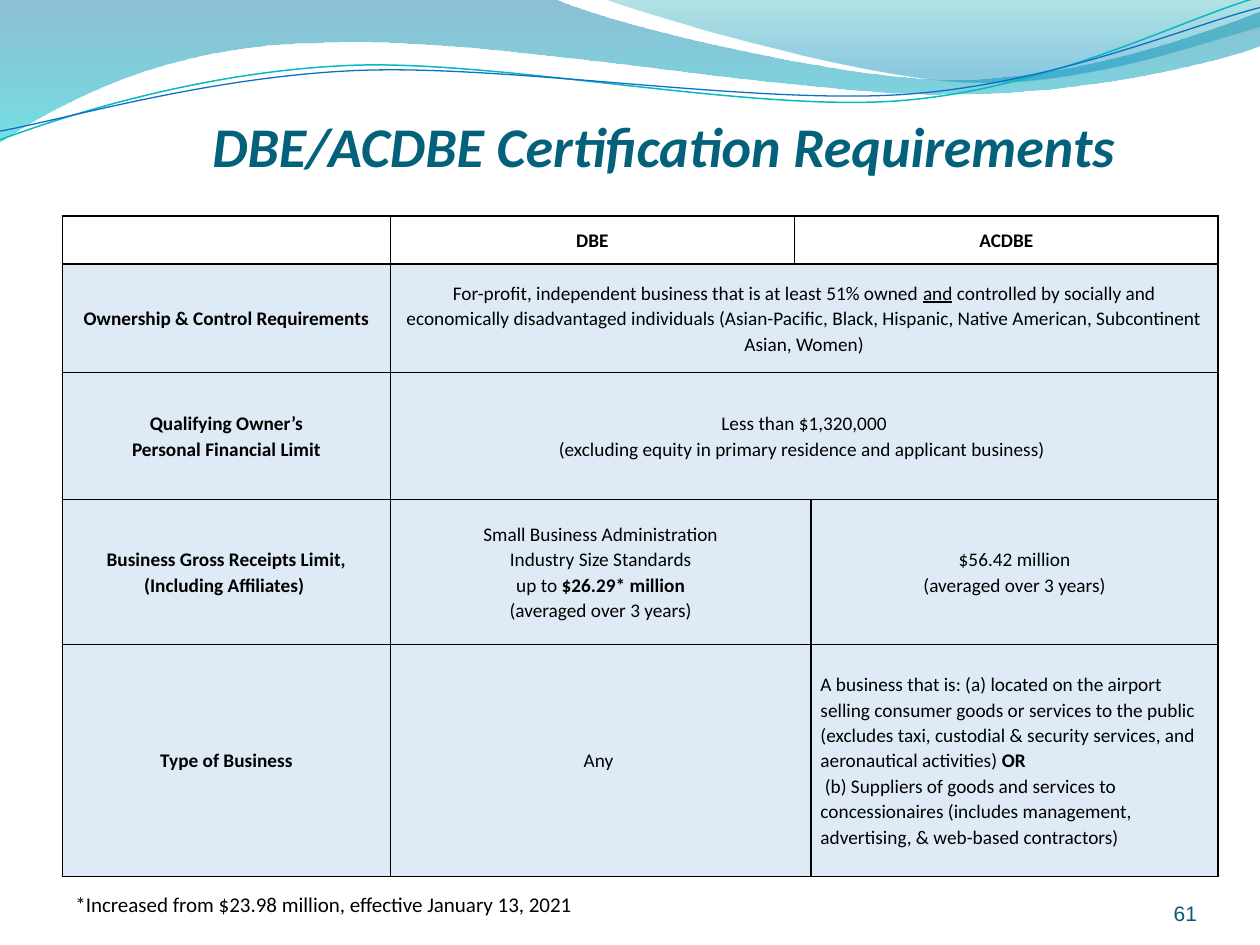
from dataclasses import dataclass
from math import cos, radians, sin

from lxml.etree import SubElement
from pptx import Presentation
from pptx.dml.color import RGBColor as RGB
from pptx.enum.text import MSO_ANCHOR as ANCHOR, PP_ALIGN as ALIGN
from pptx.oxml.ns import qn
from pptx.util import Pt


@dataclass(frozen=True)
class Theme:
    title: str = "04617B"
    number: str = "045D75"
    ink: str = "000000"
    cell: str = "DEEAF6"
    teal_line: str = "0AB8BF"
    blue_line: str = "0F6FC6"
    wide_wave: tuple = ((0, "0074A1", 45), (1, "00C6CF", 55))
    short_wave: tuple = ((0, "00A1A9", 30), (0.8, "008BBF", 45))
    title_size: float = 32
    note_size: float = 12
    cell_size: float = 11
    body_font: str = "Calibri"
    number_font: str = "Arial"


T = Theme()
BOLD = {"bold": True}
UNDERLINE = {"underline": True}
CELL_FORMAT = {"margin_left": Pt(5.4), "margin_right": Pt(5.4), "margin_top": 0,
               "margin_bottom": 0, "vertical_anchor": ANCHOR.MIDDLE}

WIDE_WAVE = [(0, -0.7), (316.8, -0.7),
             (342.7, 12.2, 478.1, 45.4, 545.8, 45.4), (614.2, 45.4, 689.8, 18.7, 720, 6.5),
             (720.7, 25.9), (707.8, 31.7, 626.4, 54.7, 537.1, 54),
             (447.8, 54, 275, 20.2, 185, 24.5), (92.9, 25.2, 33.1, 59.8, -0.7, 81.4),
             (0, -0.7)]
SHORT_WAVE = [(344.9, -0.7), (366.5, 7.9, 491, 44.6, 553.7, 46.8),
              (616.3, 49.7, 691.9, 23, 720, 15.1), (720, 0), (344.9, -0.7)]
TEAL_CURVE = [(0, 79.9), (34.6, 67, 113.8, 41, 199.4, 37.4),
              (284.4, 33.8, 427, 64.1, 513.4, 57.6), (599.8, 51.1, 675.4, 10.8, 718.6, -1.4)]
BLUE_CURVE = [(0, 74.9), (33.8, 69.1, 118.1, 43.9, 203.8, 40.3),
              (290.2, 36.7, 429.8, 59.8, 516.2, 54), (601.9, 48.2, 677.5, 15.1, 720, 4.3)]

COLUMNS = [187.2, 231.1, 9.4, 232.6]
ROWS = [27.4, 61.9, 72.7, 82.8, 132.5]
CELLS = [
    (0, 1, 1, [[("DBE", BOLD)]]),
    (0, 2, 2, [[("ACDBE", BOLD)]]),
    (1, 0, 1, [[("Ownership & Control Requirements", BOLD)]]),
    (1, 1, 3, [[("For-profit, independent business that is at least 51% owned ", {}),
                ("and", UNDERLINE),
                (" controlled by socially and economically disadvantaged individuals "
                 "(Asian-Pacific, Black, Hispanic, Native American, Subcontinent Asian, Women)", {})]]),
    (2, 0, 1, [[("Qualifying Owner’s", BOLD)], [("Personal Financial Limit", BOLD)]]),
    (2, 1, 3, [[("Less than $1,320,000", {})],
               [("(excluding equity in primary residence and applicant business) ", {})]]),
    (3, 0, 1, [[("Business Gross Receipts Limit, (Including Affiliates) ", BOLD)]]),
    (3, 1, 2, [[("Small Business Administration", {})], [("Industry Size Standards", {})],
               [("up to ", {}), ("$26.29* million", BOLD)], [("(averaged over 3 years)", {})]]),
    (3, 3, 1, [[("$56.42 million", {})], [("(averaged over 3 years)", {})]]),
    (4, 0, 1, [[("Type of Business", BOLD)]]),
    (4, 1, 2, [[("Any ", {})]]),
    (4, 3, 1, [[("A business that is: (a) located on the airport selling consumer goods or "
                 "services to the public (excludes taxi, custodial & security services, and "
                 "aeronautical activities) ", {}), ("OR", BOLD)],
               [(" (b) Suppliers of goods and services to concessionaires (includes management, "
                 "advertising, & web-based contractors)", {})]]),
]


def apply(target, values):
    for name, value in values.items():
        setattr(target, name, value)


def add_run(p, text, size, color, font, style):
    r = p.add_run()
    r.text = text
    apply(r.font, {"name": font, "size": Pt(size), **style})
    r.font.color.rgb = RGB.from_string(color)


def turn(segments, frame, degrees):
    left, top, width, height = frame
    cx, cy = left + width / 2, top + height / 2
    c, s = cos(radians(degrees)), sin(radians(degrees))
    return [[v for x, y in zip(segment[::2], segment[1::2])
             for v in (cx + (x - cx) * c - (y - cy) * s, cy + (x - cx) * s + (y - cy) * c)]
            for segment in segments]


def add_outline(slide, box, frame, segments, close):
    left, top, width, height = frame
    x0, y0 = box[0] + left, box[1] + top
    builder = slide.shapes.build_freeform(Pt(x0), Pt(y0))
    builder.add_line_segments([(Pt(x0 + width), Pt(y0 + height))], close=False)
    sp = builder.convert_to_shape()
    sp.shadow.inherit = False
    outline = next(sp._element.iter(qn("a:path")))
    for child in list(outline):
        outline.remove(child)
    for i, segment in enumerate(segments):
        kind = "moveTo" if i == 0 else "lnTo" if len(segment) == 2 else "cubicBezTo"
        step = SubElement(outline, qn(f"a:{kind}"))
        for x, y in zip(segment[::2], segment[1::2]):
            SubElement(step, qn("a:pt"), x=str(Pt(x - left)), y=str(Pt(y - top)))
    if close:
        SubElement(outline, qn("a:close"))
    return sp


def add_waves(slide, box):
    for segments, frame, stops in (
            (WIDE_WAVE, (-0.7, -0.7, 721.4, 82.1), T.wide_wave),
            (SHORT_WAVE, (344.9, -0.7, 375.1, 50.4), T.short_wave)):
        sp = add_outline(slide, box, frame, segments, True)
        sp.line.fill.background()
        sp.fill.gradient()
        sp.fill.gradient_angle = 270
        for stop, (position, color, _) in zip(sp.fill.gradient_stops, stops):
            stop.position = position
            stop.color.rgb = RGB.from_string(color)
        colors = sp._element.spPr.iter(qn("a:srgbClr"))
        for node, (_, _, opacity) in zip(colors, stops):
            SubElement(node, qn("a:alpha"), val=str(opacity * 1000))

    tilt = 2.7
    for segments, frame, color, width in (
            (TEAL_CURVE, (-1.4, 15.8, 721.4, 51.1), T.teal_line, 0.85),
            (BLUE_CURVE, (-1.4, 21.6, 722.2, 41.8), T.blue_line, 0.75)):
        sp = add_outline(slide, box, frame, turn(segments, frame, tilt), False)
        sp.rotation = 360 - tilt
        sp.fill.background()
        sp.line.color.rgb = RGB.from_string(color)
        sp.line.width = Pt(width)


def add_label(slide, box, text, size, color, font, frame, align, style):
    tf = slide.shapes.add_textbox(*map(Pt, box)).text_frame
    apply(tf, {"word_wrap": True, **frame})
    p = tf.paragraphs[0]
    p.alignment = align
    add_run(p, text, size, color, font, style)


def add_borders(cell):
    tc_pr = cell._tc.get_or_add_tcPr()
    for side in ("lnL", "lnR", "lnT", "lnB"):
        ln = SubElement(tc_pr, qn(f"a:{side}"), w=str(Pt(1)))
        SubElement(SubElement(ln, qn("a:solidFill")), qn("a:srgbClr"), val=T.ink)


def add_requirements(slide, box):
    table = slide.shapes.add_table(len(ROWS), len(COLUMNS), *map(Pt, box)).table
    apply(table, {"first_row": False, "horz_banding": False})
    for column, width in zip(table.columns, COLUMNS):
        column.width = Pt(width)
    for i, (row, height) in enumerate(zip(table.rows, ROWS)):
        row.height = Pt(height)
        for cell in row.cells:
            apply(cell, CELL_FORMAT)
            add_borders(cell)
            if i:
                cell.fill.solid()
                cell.fill.fore_color.rgb = RGB.from_string(T.cell)
            else:
                cell.fill.background()
    for row, column, span, lines in CELLS:
        cell = table.cell(row, column)
        if span > 1:
            cell.merge(table.cell(row, column + span - 1))
        tf = cell.text_frame
        align = ALIGN.LEFT if (row, column) == (4, 3) else ALIGN.CENTER
        for i, runs in enumerate(lines):
            p = tf.add_paragraph() if i else tf.paragraphs[0]
            apply(p, {"alignment": align, "line_spacing": 1.07})
            for text, style in runs:
                add_run(p, text, T.cell_size, T.ink, T.body_font, style)


def main():
    prs = Presentation()
    apply(prs, {"slide_width": Pt(720), "slide_height": Pt(540)})
    slide = prs.slides.add_slide(prs.slide_layouts[6])
    flush = {"margin_left": 0, "margin_right": 0, "vertical_anchor": ANCHOR.BOTTOM}
    add_waves(slide, (0, 0, 720, 82))
    add_label(slide, (39.2, 54, 680.4, 48.2), "DBE/ACDBE Certification Requirements",
              T.title_size, T.title, T.body_font, {**flush, "margin_bottom": 0},
              ALIGN.CENTER, {"bold": True, "italic": True})
    add_label(slide, (624.2, 500.4, 59.8, 28.8), "61", T.note_size, T.number, T.number_font,
              {**flush, "margin_top": 0, "margin_bottom": 0}, ALIGN.RIGHT, {})
    add_requirements(slide, (35.8, 123.5, sum(COLUMNS), sum(ROWS)))
    add_label(slide, (36, 505.8, 770.4, 21.6),
              "*Increased from $23.98 million, effective January 13, 2021",
              T.note_size, T.ink, T.body_font, {"vertical_anchor": ANCHOR.MIDDLE}, ALIGN.LEFT, {})
    prs.save("out.pptx")


if __name__ == "__main__":
    main()
